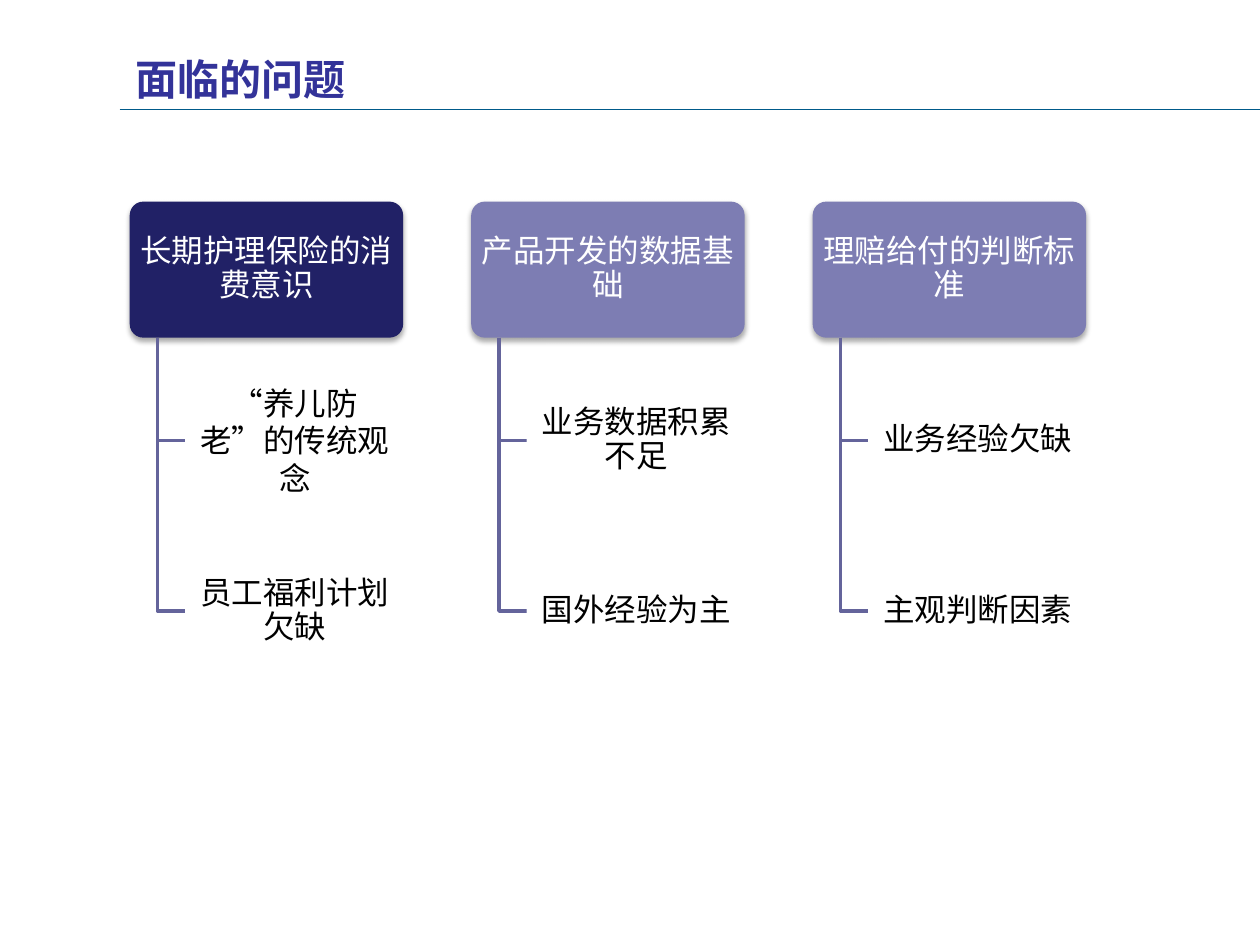
from lxml import etree
from pptx import Presentation
from pptx.dml.color import RGBColor
from pptx.enum.shapes import MSO_CONNECTOR, MSO_SHAPE
from pptx.enum.text import MSO_ANCHOR, PP_ALIGN
from pptx.oxml.ns import qn
from pptx.util import Inches, Pt

ROUNDED = MSO_SHAPE.ROUNDED_RECTANGLE
STRAIGHT = MSO_CONNECTOR.STRAIGHT
MIDDLE = MSO_ANCHOR.MIDDLE
LEFT, CENTER = PP_ALIGN.LEFT, PP_ALIGN.CENTER

TITLE = "面临的问题"
# heading, heading fill, items as (text, line spacing)
COLUMNS = [
    ("长期护理保险的消费意识", "navy", [("“养儿防老”的传统观念", 1.0), ("员工福利计划欠缺", 0.9)]),
    ("产品开发的数据基础", "lavender", [("业务数据积累不足", 0.9), ("国外经验为主", 0.9)]),
    ("理赔给付的判断标准", "lavender", [("业务经验欠缺", 0.9), ("主观判断因素", 0.9)]),
]
COLORS = {
    "title": "333399",
    "rule": "005A8A",
    "navy": "212166",
    "lavender": "7D7DB3",
    "branch": "64649B",
    "white": "FFFFFF",
    "black": "000000",
}
FONT = "Noto Sans CJK SC"

LEFT_EDGE, TOP_EDGE = 1.03, 1.6
COLUMN_STEP, ROW_STEP = 2.71, 1.355
HEADING_WIDTH, ITEM_WIDTH, BOX_HEIGHT = 2.17, 1.74, 1.08
TRUNK_INDENT, BRANCH_LENGTH = 0.22, 0.22


def color(name):
    return RGBColor.from_string(COLORS[name])


def write_text(shape, text, size, color_name, alignment, bold=False, line_spacing=1.0):
    frame = shape.text_frame
    frame.text = text
    frame.word_wrap = True
    frame.vertical_anchor = MIDDLE
    paragraph = frame.paragraphs[0]
    paragraph.alignment = alignment
    paragraph.line_spacing = line_spacing
    font = paragraph.runs[0].font
    font.size = Pt(size)
    font.bold = bold
    font.name = FONT
    font.color.rgb = color(color_name)
    east_asian = etree.SubElement(paragraph.runs[0]._r.rPr, qn("a:ea"))
    east_asian.set("typeface", FONT)


def add_box(slide, left, top, width, fill_name, text, text_color, line_spacing):
    box = slide.shapes.add_shape(
        ROUNDED, Inches(left), Inches(top), Inches(width), Inches(BOX_HEIGHT))
    box.adjustments[0] = 0.1
    box.shadow.inherit = False
    box.fill.solid()
    box.fill.fore_color.rgb = color(fill_name)
    box.line.fill.background()
    frame = box.text_frame
    frame.margin_left = frame.margin_right = Inches(0.04)
    frame.margin_top = frame.margin_bottom = Inches(0.03)
    write_text(box, text, 18, text_color, CENTER, line_spacing=line_spacing)
    return box


def add_alpha(color_element, percent):
    etree.SubElement(color_element, qn("a:alpha")).set("val", str(percent * 1000))


def add_drop_shadow(shape):
    effects = shape._element.spPr.find(qn("a:effectLst"))
    shadow = etree.SubElement(effects, qn("a:outerShdw"))
    shadow.set("blurRad", str(Pt(3.1)))
    shadow.set("dist", str(Pt(1.8)))
    shadow.set("dir", "5400000")
    shadow.set("rotWithShape", "0")
    shadow_color = etree.SubElement(shadow, qn("a:srgbClr"))
    shadow_color.set("val", COLORS["black"])
    add_alpha(shadow_color, 35)


def add_branch(slide, trunk_x, top, item_x, item_y):
    """Draw an elbow from the heading's underside to an item's left side."""
    builder = slide.shapes.build_freeform(Inches(trunk_x), Inches(top))
    builder.add_line_segments(
        [(Inches(trunk_x), Inches(item_y)), (Inches(item_x), Inches(item_y))], close=False)
    branch = builder.convert_to_shape()
    branch.shadow.inherit = False
    branch.fill.background()
    branch.line.color.rgb = color("branch")
    branch.line.width = Pt(2)


def add_title(slide):
    rule = slide.shapes.add_connector(
        STRAIGHT, Inches(0.95), Inches(0.87), Inches(10), Inches(0.87))
    rule.line.color.rgb = color("rule")
    rule.line.width = Pt(0.75)
    etree.SubElement(rule._element.spPr, qn("a:effectLst"))
    title = slide.shapes.add_textbox(Inches(0.98), 0, Inches(6.95), Inches(1.25))
    write_text(title, TITLE, 24, "title", LEFT, bold=True)


def add_column(slide, left, heading, fill_name, items):
    heading_box = add_box(
        slide, left, TOP_EDGE, HEADING_WIDTH, fill_name, heading, "white", 0.9)
    add_drop_shadow(heading_box)
    trunk_x = left + TRUNK_INDENT
    item_x = trunk_x + BRANCH_LENGTH
    for row, (text, line_spacing) in enumerate(items, start=1):
        item_top = TOP_EDGE + row * ROW_STEP
        add_branch(slide, trunk_x, TOP_EDGE + BOX_HEIGHT, item_x, item_top + BOX_HEIGHT / 2)
        item_box = add_box(
            slide, item_x, item_top, ITEM_WIDTH, "white", text, "black", line_spacing)
        add_alpha(item_box._element.spPr.find(qn("a:solidFill"))[0], 90)


def main():
    presentation = Presentation()
    presentation.slide_width = Inches(10)
    presentation.slide_height = Inches(7.5)
    slide = presentation.slides.add_slide(presentation.slide_layouts[6])
    add_title(slide)
    for index, column in enumerate(COLUMNS):
        add_column(slide, LEFT_EDGE + index * COLUMN_STEP, *column)
    presentation.save("out.pptx")


if __name__ == "__main__":
    main()
